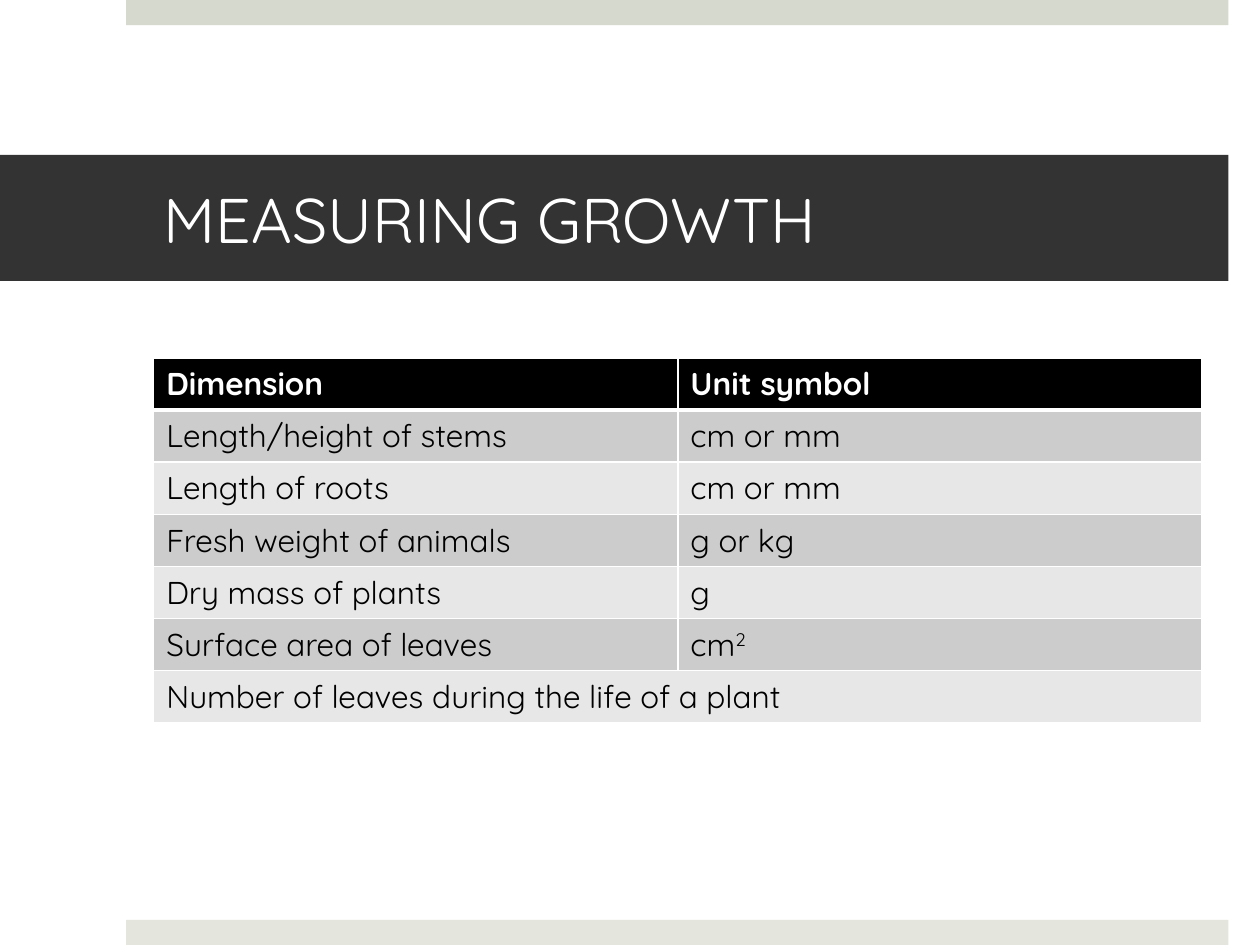
"""Build the slide on measuring growth."""
from dataclasses import dataclass

from lxml import etree
from pptx import Presentation
from pptx.dml.color import RGBColor
from pptx.enum.shapes import MSO_SHAPE
from pptx.enum.text import MSO_ANCHOR, PP_ALIGN
from pptx.oxml.ns import qn
from pptx.util import Inches, Pt

RECTANGLE = MSO_SHAPE.RECTANGLE
MIDDLE = MSO_ANCHOR.MIDDLE
LEFT = PP_ALIGN.LEFT
SLIDE_WIDTH = Inches(10)
SLIDE_HEIGHT = Inches(7.5)


@dataclass(frozen=True)
class Theme:
    """Colours, font and sizes of the slide."""
    font: str = "Quicksand"
    title_size: int = 36
    table_size: int = 18
    light: str = "FFFFFF"
    dark: str = "000000"
    banner: str = "333333"
    top_bar: str = "D6D9CD"
    bottom_bar: str = "E4E6DE"
    bands: tuple[str, str] = ("CCCCCC", "E7E7E7")
    thin: float = 1
    thick: float = 3


@dataclass(frozen=True)
class Box:
    """A place given as shares of the slide's width and height."""
    left: float
    top: float
    width: float
    height: float

    def lengths(self) -> tuple[int, int, int, int]:
        """Return left, top, width and height as slide lengths."""
        return (int(self.left * SLIDE_WIDTH), int(self.top * SLIDE_HEIGHT),
                int(self.width * SLIDE_WIDTH), int(self.height * SLIDE_HEIGHT))


@dataclass(frozen=True)
class Measure:
    """A dimension of growth with its unit; without one it spans the row."""
    dimension: str
    unit: str = ""
    power: str = ""


THEME = Theme()
BAR_HEIGHT = 0.2 / 7.5
TOP_BAR = Box(0.1, 0, 0.875, BAR_HEIGHT)
BOTTOM_BAR = Box(0.1, 1 - BAR_HEIGHT, 0.875, BAR_HEIGHT)
BANNER = Box(0, 1.23 / 7.5, 0.975, 1 / 7.5)
TABLE = Box(0.122, 2.84 / 7.5, 0.832, 2.84 / 7.5)
MEASURES = (
    Measure("Dimension", "Unit symbol"),
    Measure("Length/height of stems", "cm or mm"),
    Measure("Length of roots", "cm or mm"),
    Measure("Fresh weight of animals", "g or kg"),
    Measure("Dry mass of plants", "g"),
    Measure("Surface area of leaves", "cm", "2"),
    Measure("Number of leaves during the life of a plant"),
)


def style_font(font, size: int, color: str, bold: bool = False) -> None:
    """Apply the theme's font with a size, colour and weight."""
    font.name = THEME.font
    font.size = Pt(size)
    font.bold = bold
    font.color.rgb = RGBColor.from_string(color)


def add_bar(slide, box: Box, color: str):
    """Add a plain filled rectangle."""
    shape = slide.shapes.add_shape(RECTANGLE, *box.lengths())
    shape.shadow.inherit = False
    shape.fill.solid()
    shape.fill.fore_color.rgb = RGBColor.from_string(color)
    shape.line.fill.background()
    return shape


def add_title(slide, text: str) -> None:
    """Add the dark banner with the slide's title."""
    frame = add_bar(slide, BANNER, THEME.banner).text_frame
    frame.word_wrap = True
    frame.vertical_anchor = MIDDLE
    frame.margin_left, frame.margin_right = Inches(1.3), Inches(0.3)
    paragraph = frame.paragraphs[0]
    paragraph.text = text
    paragraph.alignment = LEFT
    style_font(paragraph.font, THEME.title_size, THEME.light)


def add_borders(cell, top: float, bottom: float) -> None:
    """Draw light borders on the four sides of a cell."""
    properties = cell._tc.get_or_add_tcPr()
    widths = {"a:lnL": THEME.thin, "a:lnR": THEME.thin, "a:lnT": top, "a:lnB": bottom}
    for tag, width in widths.items():
        line = etree.SubElement(properties, qn(tag), w=str(Pt(width)))
        fill = etree.SubElement(line, qn("a:solidFill"))
        etree.SubElement(fill, qn("a:srgbClr"), val=THEME.light)


def fill_cell(cell, row: int, text: str, power: str = "") -> None:
    """Write and style one table cell."""
    header = row == 0
    add_borders(cell, THEME.thick if row == 1 else THEME.thin,
                THEME.thick if header else THEME.thin)
    cell.fill.solid()
    color = THEME.dark if header else THEME.bands[(row - 1) % 2]
    cell.fill.fore_color.rgb = RGBColor.from_string(color)
    paragraph = cell.text_frame.paragraphs[0]
    style_font(paragraph.font, THEME.table_size,
               THEME.light if header else THEME.dark, header)
    if text:
        paragraph.add_run().text = text
    if power:
        run = paragraph.add_run()
        run.text = power
        run.font._element.set("baseline", "30000")


def add_measures(slide, measures: tuple[Measure, ...]) -> None:
    """Add the table of dimensions and units."""
    table = slide.shapes.add_table(len(measures), 2, *TABLE.lengths()).table
    for row, measure in enumerate(measures):
        fill_cell(table.cell(row, 0), row, measure.dimension)
        fill_cell(table.cell(row, 1), row, measure.unit, measure.power)
        if not measure.unit:
            table.cell(row, 0).merge(table.cell(row, 1))


def main() -> None:
    """Build and save the presentation."""
    presentation = Presentation()
    presentation.slide_width = SLIDE_WIDTH
    presentation.slide_height = SLIDE_HEIGHT
    slide = presentation.slides.add_slide(presentation.slide_layouts[6])
    add_bar(slide, TOP_BAR, THEME.top_bar)
    add_bar(slide, BOTTOM_BAR, THEME.bottom_bar)
    add_title(slide, "MEASURING GROWTH")
    add_measures(slide, MEASURES)
    presentation.save("out.pptx")


if __name__ == "__main__":
    main()
